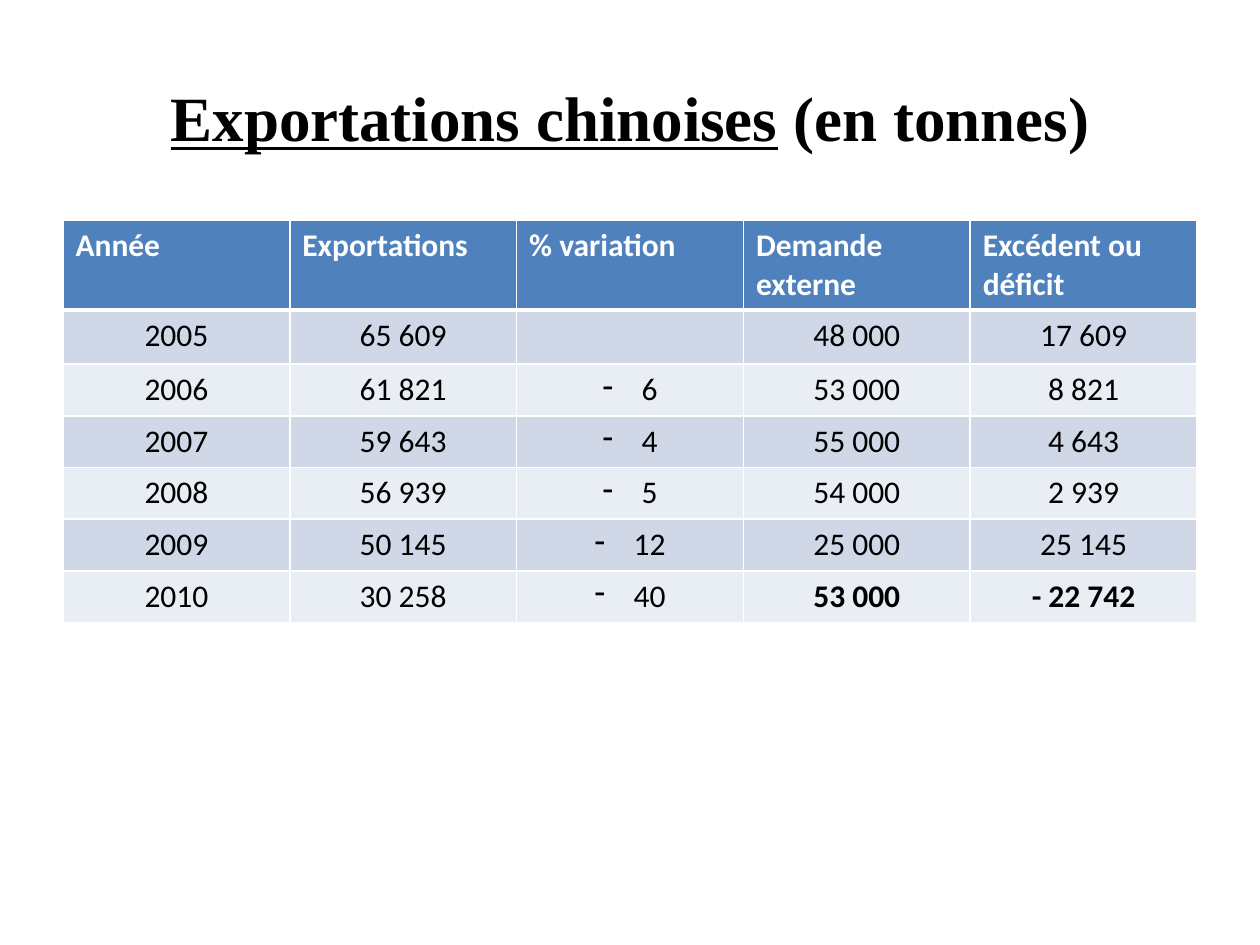
from lxml import etree
from pptx import Presentation
from pptx.dml.color import RGBColor
from pptx.enum.text import MSO_ANCHOR, PP_ALIGN
from pptx.oxml.ns import qn
from pptx.util import Inches, Pt

CENTER, LEFT = PP_ALIGN.CENTER, PP_ALIGN.LEFT
MIDDLE = MSO_ANCHOR.MIDDLE

BLACK = RGBColor(0x00, 0x00, 0x00)
WHITE = RGBColor(0xFF, 0xFF, 0xFF)
HEADER_BLUE = RGBColor(0x4F, 0x81, 0xBD)
BANDS = (RGBColor(0xD0, 0xD8, 0xE8), RGBColor(0xE9, 0xED, 0xF4))

TITLE = (("Exportations chinoises", True), (" (en tonnes)", False))
HEADERS = ("Année", "Exportations", "% variation", "Demande externe", "Excédent ou déficit")
ROWS = (
    ("2005", "65 609", "", "48 000", "17 609"),
    ("2006", "61 821", "6", "53 000", "8 821"),
    ("2007", "59 643", "4", "55 000", "4 643"),
    ("2008", "56 939", "5", "54 000", "2 939"),
    ("2009", "50 145", "12", "25 000", "25 145"),
    ("2010", "30 258", "40", "53 000", "- 22 742"),
)
VARIATION_COL = 2
BOLD_CELLS = {(6, 3), (6, 4)}

LEFT_EDGE, WIDTH = 0.5, 9
TABLE_TOP = 1.75
ROW_HEIGHTS = [0.41, 0.43] + [0.41] * 5


def add_borders(cell, bottom_width):
    tc_pr = cell._tc.get_or_add_tcPr()
    for side, width in (("L", 1), ("R", 1), ("T", 1), ("B", bottom_width)):
        ln = etree.SubElement(tc_pr, qn(f"a:ln{side}"), w=str(Pt(width)))
        fill = etree.SubElement(ln, qn("a:solidFill"))
        etree.SubElement(fill, qn("a:srgbClr"), val=str(WHITE))


def add_dash_bullet(p):
    p_pr = p._p.get_or_add_pPr()
    p_pr.set("marL", str(Inches(0.31)))
    p_pr.set("indent", str(-Inches(0.31)))
    etree.SubElement(p_pr, qn("a:buFontTx"))
    etree.SubElement(p_pr, qn("a:buChar"), char="-")


def add_title(slide):
    title = slide.shapes.title
    title.left, title.top = Inches(LEFT_EDGE), Inches(0.3)
    title.width, title.height = Inches(WIDTH), Inches(1.25)
    tf = title.text_frame
    tf.vertical_anchor = MIDDLE
    p = tf.paragraphs[0]
    p.alignment = CENTER
    for text, underlined in TITLE:
        r = p.add_run()
        r.text = text
        r.font.name, r.font.size = "Times New Roman", Pt(36)
        r.font.bold, r.font.underline = True, underlined
        r.font.color.rgb = BLACK


def fill_cell(cell, row, col, text):
    header = row == 0
    add_borders(cell, 3 if header or row == 0 else 1)
    cell.fill.solid()
    cell.fill.fore_color.rgb = HEADER_BLUE if header else BANDS[(row - 1) % 2]
    cell.text = text
    p = cell.text_frame.paragraphs[0]
    p.alignment = LEFT if header else CENTER
    if col == VARIATION_COL and text and not header:
        add_dash_bullet(p)
    p.font.name, p.font.size = "Calibri", Pt(18)
    p.font.bold = header or (row, col) in BOLD_CELLS
    p.font.color.rgb = WHITE if header else BLACK


def add_export_table(slide):
    data = (HEADERS,) + ROWS
    table = slide.shapes.add_table(
        len(data), len(HEADERS), Inches(LEFT_EDGE), Inches(TABLE_TOP),
        Inches(WIDTH), Inches(sum(ROW_HEIGHTS))).table
    for table_row, height in zip(table.rows, ROW_HEIGHTS):
        table_row.height = Inches(height)
    for row, texts in enumerate(data):
        for col, text in enumerate(texts):
            fill_cell(table.cell(row, col), row, col, text)


def main():
    prs = Presentation()
    prs.slide_width, prs.slide_height = Inches(10), Inches(7.5)
    slide = prs.slides.add_slide(prs.slide_layouts[5])
    add_title(slide)
    add_export_table(slide)
    prs.save("out.pptx")


if __name__ == "__main__":
    main()
